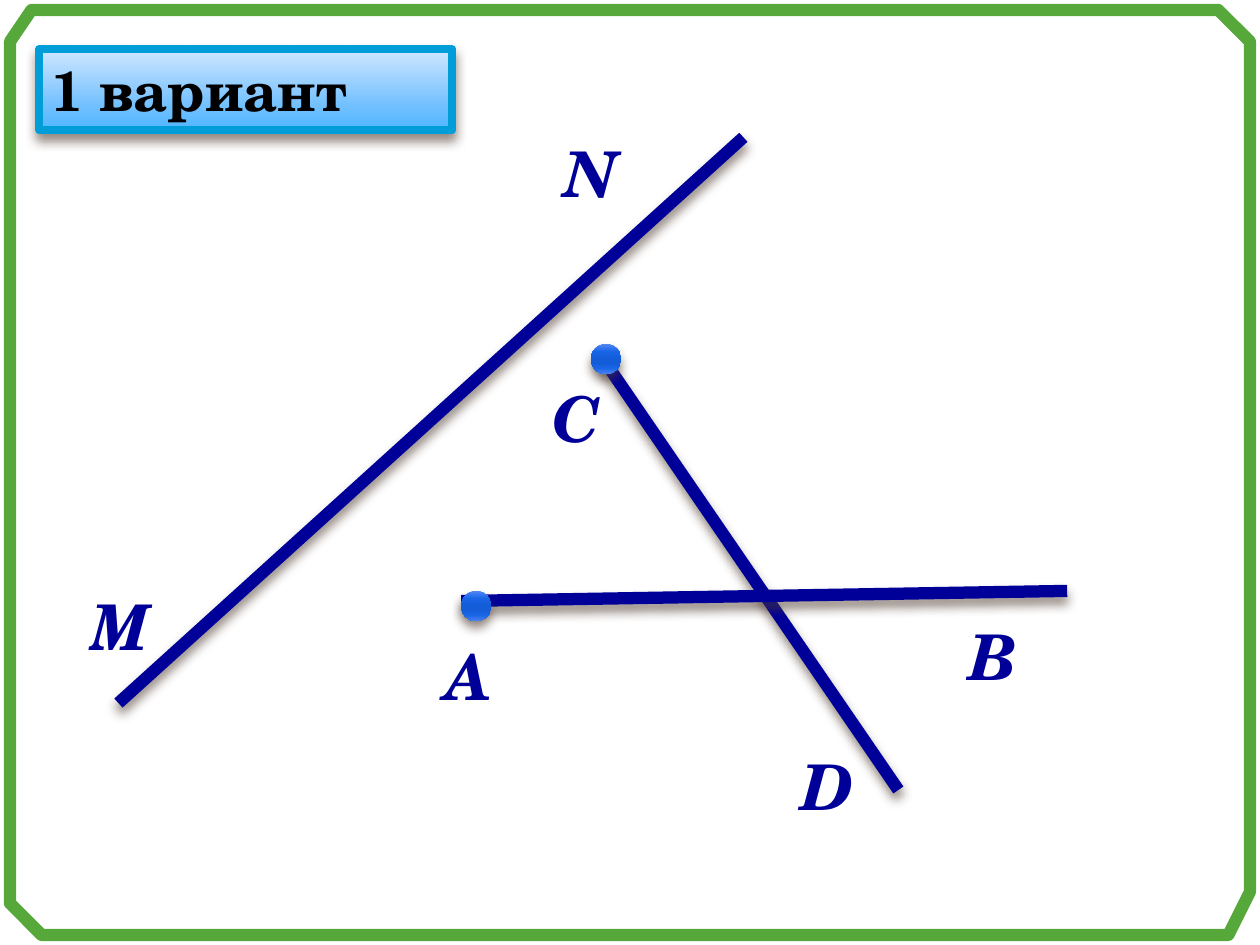
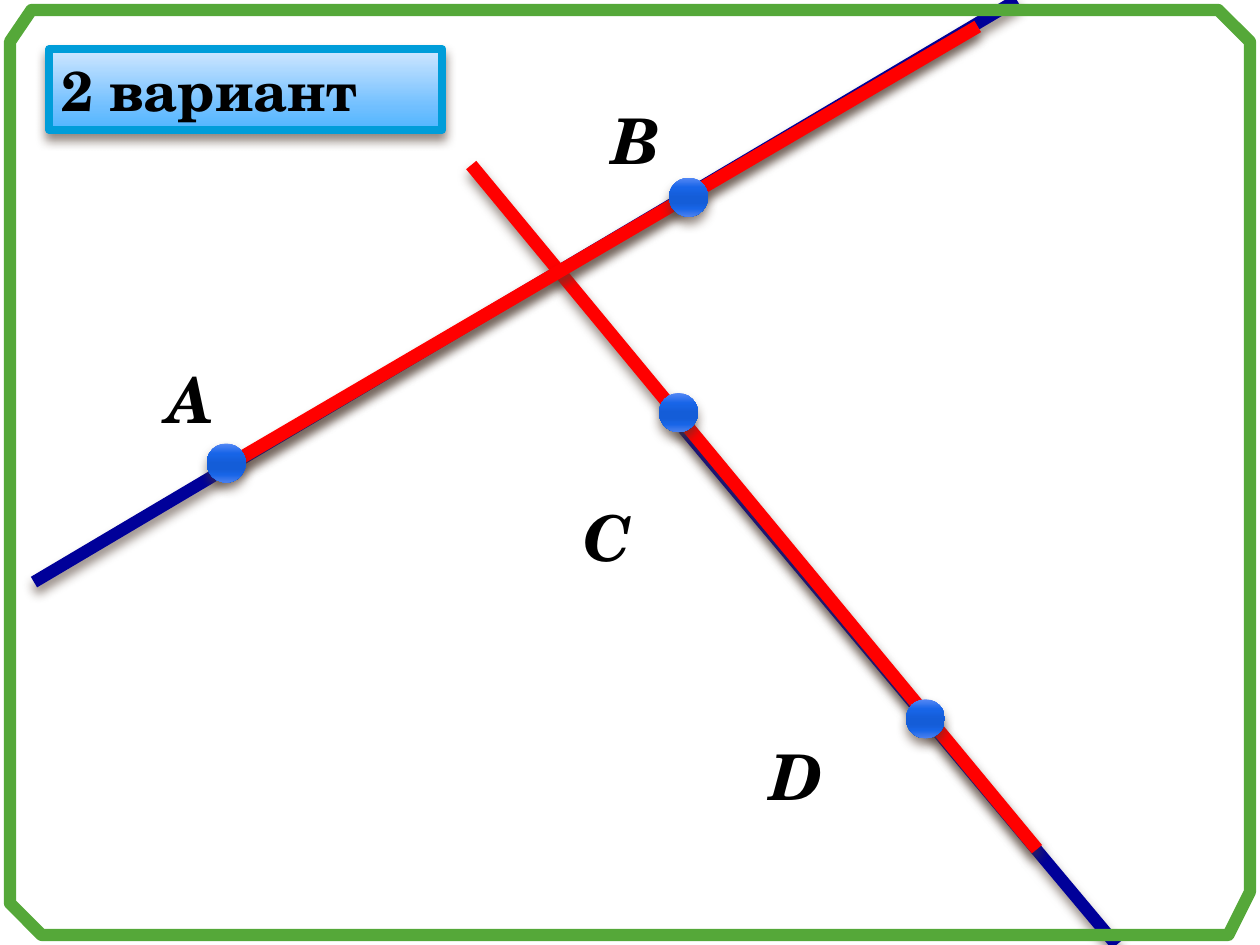
from lxml import etree
from pptx import Presentation
from pptx import util as u
from pptx.dml import color
from pptx.enum import shapes, text
from pptx.oxml import ns

PX = 9144
FONT = "TeX Gyre Schola"
NAVY, RED, BLACK, GREEN, SKY, SHADE = "000099", "FF0000", "000000", "55A839", "009DD9", "4E3B30"
DOT_STOPS = [(0, "5588F5"), (25, "1865E8"), (50, "145DD8"), (65, "145DD8"), (80, "1865E7"), (100, "4C81EF")]
TITLE_STOPS = [(0, "D0E7FF"), (72, "70BFFF"), (100, "50B6FF")]
FRAME = [(8, 33), (8, 717), (33, 742), (975, 742), (992, 708), (992, 33), (967, 8), (25, 8)]


def rgb(value):
    return color.RGBColor.from_string(value)


def add_element(parent, tag, **attrs):
    return etree.SubElement(parent, ns.qn(tag), {k: str(v) for k, v in attrs.items()})


class Board:
    def __init__(self):
        self.prs = Presentation()
        self.prs.slide_width, self.prs.slide_height = 1000 * PX, 750 * PX
        self.slide = None

    def new_slide(self):
        self.slide = self.prs.slides.add_slide(self.prs.slide_layouts[6])

    def stroke(self, sp, hex_color, width):
        sp.line.color.rgb = rgb(hex_color)
        sp.line.width = u.Pt(width)

    def shadow(self, effects):
        outer = add_element(effects, "a:outerShdw", blurRad=u.Pt(6), dist=u.Pt(4),
                            dir=5400000, algn="ctr", rotWithShape=0)
        add_element(add_element(outer, "a:srgbClr", val=SHADE), "a:alpha", val=60000)

    def gradient_shape(self, kind, box, stops):
        sp = self.slide.shapes.add_shape(kind, *(v * PX for v in box))
        sp.fill.gradient()
        sp.fill.gradient_angle = 270
        gradient = sp.element.spPr.find(ns.qn("a:gradFill"))
        stop_list = gradient.find(ns.qn("a:gsLst"))
        for stop in list(stop_list):
            stop_list.remove(stop)
        for position, hex_color in stops:
            stop = add_element(stop_list, "a:gs", pos=position * 1000)
            add_element(stop, "a:srgbClr", val=hex_color)
        sp.shadow.inherit = False
        self.shadow(sp.element.spPr.find(ns.qn("a:effectLst")))
        return sp

    def add_text(self, sp, words, size, hex_color, italic=False):
        tf = sp.text_frame
        tf.word_wrap = True
        tf.auto_size = text.MSO_AUTO_SIZE.SHAPE_TO_FIT_TEXT
        tf.vertical_anchor = text.MSO_ANCHOR.TOP
        p = tf.paragraphs[0]
        p.alignment = text.PP_ALIGN.LEFT
        r = p.add_run()
        r.text = words
        r.font.name, r.font.size = FONT, u.Pt(size)
        r.font.bold, r.font.italic = True, italic
        r.font.color.rgb = rgb(hex_color)

    def segment(self, start, end, hex_color, width):
        ends = (v * PX for v in (*start, *end))
        line = self.slide.shapes.add_connector(shapes.MSO_CONNECTOR.STRAIGHT, *ends)
        self.stroke(line, hex_color, width)
        self.shadow(add_element(line.element.spPr, "a:effectLst"))

    def point(self, x, y, size):
        dot = self.gradient_shape(shapes.MSO_SHAPE.OVAL, (x, y, size, size), DOT_STOPS)
        dot.line.fill.background()

    def label(self, letter, x, y, hex_color):
        box = self.slide.shapes.add_textbox(x * PX, y * PX, 90 * PX, 71 * PX)
        self.add_text(box, letter, 36, hex_color, italic=True)

    def title(self, words, x, width):
        sp = self.gradient_shape(shapes.MSO_SHAPE.RECTANGLE, (x, 39, width, 64), TITLE_STOPS)
        self.stroke(sp, SKY, 4.5)
        self.add_text(sp, words, 32, BLACK)

    def frame(self):
        builder = self.slide.shapes.build_freeform(*FRAME[0], scale=PX)
        builder.add_line_segments(FRAME[1:], close=True)
        sp = builder.convert_to_shape()
        sp.fill.background()
        sp.shadow.inherit = False
        self.stroke(sp, GREEN, 7)

    def drawing(self, title, segments, points, dot_size, labels, label_color):
        self.new_slide()
        for segment in segments:
            self.segment(*segment)
        for x, y in points:
            self.point(x, y, dot_size)
        for letter, x, y in labels:
            self.label(letter, x, y, label_color)
        self.frame()
        self.title(*title)


def main():
    board = Board()
    board.drawing(
        title=("1 вариант", 31, 328),
        segments=[((94, 558), (590, 109), NAVY, 7),
                  ((476, 281), (713, 627), NAVY, 7),
                  ((366, 477), (847, 469), NAVY, 7)],
        points=[(366, 469), (469, 273)],
        dot_size=24,
        labels=[("М", 62, 461), ("N", 438, 102), ("A", 343, 501),
                ("B", 760, 485), ("C", 429, 296), ("D", 626, 588)],
        label_color=NAVY,
    )
    board.drawing(
        title=("2 вариант", 39, 312),
        segments=[((539, 336), (886, 750), NAVY, 7),
                  ((27, 462), (807, 0), NAVY, 7),
                  ((374, 131), (823, 674), RED, 7.5),
                  ((185, 367), (776, 21), RED, 7.5)],
        points=[(164, 352), (531, 141), (719, 555), (523, 312)],
        dot_size=31,
        labels=[("A", 122, 281), ("B", 476, 76), ("C", 453, 391), ("D", 602, 580)],
        label_color=BLACK,
    )
    board.prs.save("out.pptx")


if __name__ == "__main__":
    main()
